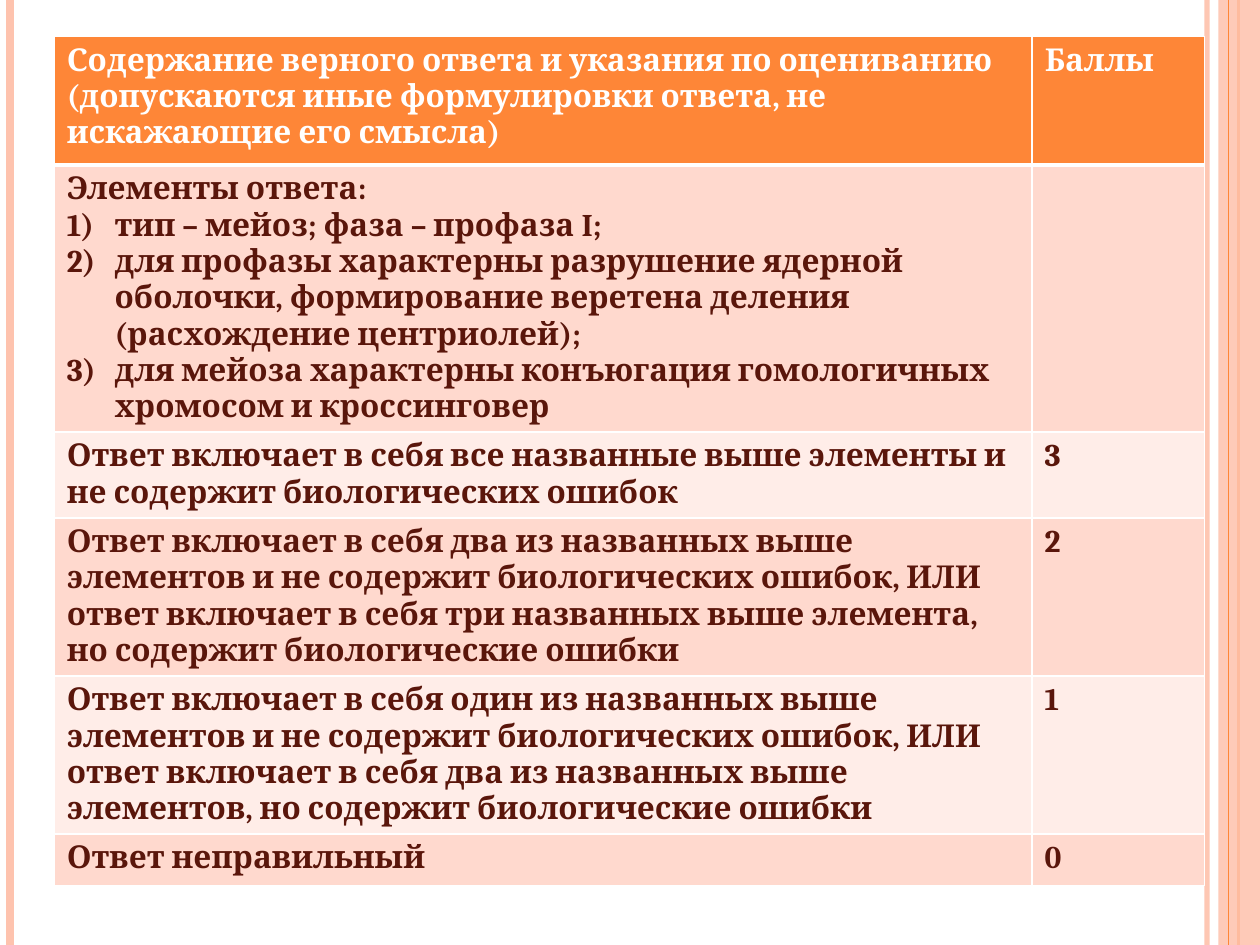
import pptx
import pptx.util
import pptx.dml.color
import pptx.enum.shapes
import pptx.oxml
import pptx.oxml.ns
from lxml import etree

COLORS = {"orange": "FE8637", "peach": "FEC3AE", "band": "FFD9CE",
          "light": "FFEDE8", "white": "FFFFFF", "text": "5A160B"}
WIDTH, HEIGHT = 10, 7.5

ROWS = [
    (["Содержание верного ответа и указания по оцениванию",
      "(допускаются иные формулировки ответа, не искажающие его смысла)"], "Баллы"),
    (["Элементы ответа:",
      "тип – мейоз; фаза – профаза I;",
      "для профазы характерны разрушение ядерной оболочки, формирование веретена "
      "деления (расхождение центриолей);",
      "для мейоза характерны конъюгация гомологичных хромосом и кроссинговер"], ""),
    (["Ответ включает в себя все названные выше элементы и не содержит "
      "биологических ошибок"], "3"),
    (["Ответ включает в себя два из названных выше элементов и не содержит "
      "биологических ошибок, ИЛИ ответ включает в себя три названных выше элемента, "
      "но содержит биологические ошибки"], "2"),
    (["Ответ включает в себя один из названных выше элементов и не содержит "
      "биологических ошибок, ИЛИ ответ включает в себя два из названных выше "
      "элементов, но содержит биологические ошибки"], "1"),
    (["Ответ неправильный"], "0"),
]
ANSWER_ROW = 1
COL_WIDTHS = [7.76, 1.37]
ROW_HEIGHTS = [1.02, 2.12, 0.68, 1.25, 1.25, 0.41]
TABLE_LEFT, TABLE_TOP = 0.43, 0.29

STRIPES_BACK = [(9.58, "peach", 3, 93), (0.08, "peach", 4.5, 100), (9.83, "orange", 1.5, 100)]
STRIPES_FRONT = [(9.75, "orange", 0.75, 100)]
SIDE_BAND = {"left": 9.67, "width": 0.33, "alpha": 87}

inch = pptx.util.Inches
qn = pptx.oxml.ns.qn


def rgb(name):
    return pptx.dml.color.RGBColor.from_string(COLORS[name])


def set_alpha(sp, percent):
    clr = sp._element.spPr.find(".//" + qn("a:srgbClr"))
    etree.SubElement(clr, qn("a:alpha"), val=str(percent * 1000))


def add_stripe(s, x, color, weight, alpha):
    sp = s.shapes.add_connector(pptx.enum.shapes.MSO_CONNECTOR.STRAIGHT,
                                inch(x), 0, inch(x), inch(HEIGHT))
    sp.line.color.rgb = rgb(color)
    sp.line.width = pptx.util.Pt(weight)
    if alpha < 100:
        set_alpha(sp, alpha)
    etree.SubElement(sp._element.spPr, qn("a:effectLst"))


def set_borders(cell, weights):
    tc_pr = cell._tc.get_or_add_tcPr()
    for i, (side, weight) in enumerate(weights.items()):
        ln = etree.Element(qn("a:ln" + side), w=str(pptx.util.Pt(weight)))
        fill = etree.SubElement(ln, qn("a:solidFill"))
        etree.SubElement(fill, qn("a:srgbClr"), val=COLORS["white"])
        tc_pr.insert(i, ln)


def number_paragraph(p):
    p_pr = p._p.get_or_add_pPr()
    p_pr.set("marL", str(inch(0.38)))
    p_pr.set("indent", str(inch(-0.38)))
    etree.SubElement(p_pr, qn("a:buFont"), typeface="+mj-lt")
    etree.SubElement(p_pr, qn("a:buAutoNum"), type="arabicParenR")


def fill_cell(cell, lines, row):
    cell.fill.solid()
    cell.fill.fore_color.rgb = rgb("orange" if row == 0 else "band" if row % 2 else "light")
    set_borders(cell, {"L": 1, "R": 1, "T": 3 if row == 1 else 1, "B": 3 if row == 0 else 1})
    tf = cell.text_frame
    font = {"name": "Cambria", "size": pptx.util.Pt(18), "bold": True}
    for i, line in enumerate(lines):
        p = tf.paragraphs[0] if i == 0 else tf.add_paragraph()
        if row == ANSWER_ROW and i > 0:
            number_paragraph(p)
        if not line:
            continue
        r = p.add_run()
        r.text = line
        for key, value in font.items():
            setattr(r.font, key, value)
        r.font.color.rgb = rgb("white" if row == 0 else "text")


def main():
    prs = pptx.Presentation()
    prs.slide_width, prs.slide_height = inch(WIDTH), inch(HEIGHT)
    s = prs.slides.add_slide(prs.slide_layouts[6])

    for stripe in STRIPES_BACK:
        add_stripe(s, *stripe)
    sp = s.shapes.add_shape(pptx.enum.shapes.MSO_SHAPE.RECTANGLE, inch(SIDE_BAND["left"]), 0,
                            inch(SIDE_BAND["width"]), inch(HEIGHT))
    sp.shadow.inherit = False
    sp.fill.solid()
    sp.fill.fore_color.rgb = rgb("peach")
    sp.line.fill.background()
    set_alpha(sp, SIDE_BAND["alpha"])
    for stripe in STRIPES_FRONT:
        add_stripe(s, *stripe)

    table = s.shapes.add_table(len(ROWS), len(COL_WIDTHS), inch(TABLE_LEFT), inch(TABLE_TOP),
                               inch(sum(COL_WIDTHS)), inch(sum(ROW_HEIGHTS))).table
    for col, width in zip(table.columns, COL_WIDTHS):
        col.width = inch(width)
    for i, (height, (lines, score)) in enumerate(zip(ROW_HEIGHTS, ROWS)):
        table.rows[i].height = inch(height)
        fill_cell(table.cell(i, 0), lines, i)
        fill_cell(table.cell(i, 1), [score], i)

    prs.save("out.pptx")


if __name__ == "__main__":
    main()
